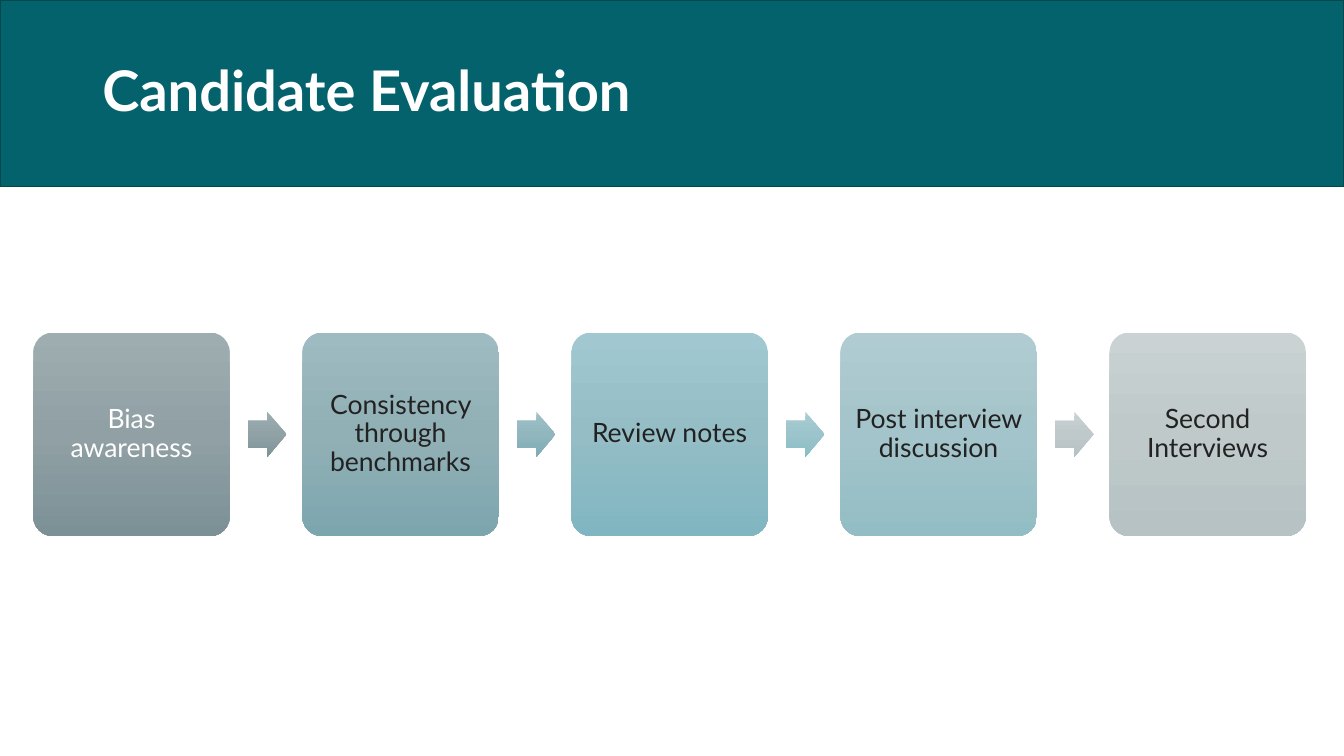
from copy import deepcopy

from pptx import Presentation
from pptx.dml.color import RGBColor
from pptx.enum.shapes import MSO_SHAPE
from pptx.enum.text import MSO_ANCHOR, PP_ALIGN
from pptx.oxml.ns import qn
from pptx.util import Cm, Pt

RECT = MSO_SHAPE.RECTANGLE
ROUND_RECT = MSO_SHAPE.ROUNDED_RECTANGLE
RIGHT_ARROW = MSO_SHAPE.RIGHT_ARROW
MIDDLE = MSO_ANCHOR.MIDDLE
LEFT, CENTER = PP_ALIGN.LEFT, PP_ALIGN.CENTER

THEME = {
    "banner": "03626B",
    "banner_line": "02494F",
    "title": {"name": "Lato", "size": Pt(40), "bold": True, "color": "FFFFFF"},
    "step_light": {"name": "Lato", "size": Pt(19), "color": "FFFFFF"},
    "step_dark": {"name": "Lato", "size": Pt(19), "color": "222222"},
    "boxes": [
        ("9DADB0", "90A0A4", "7C9196"),
        ("9EBBC2", "91B0B6", "7CA6AE"),
        ("A1C8D0", "94BDC6", "80B6C1"),
        ("B0CCD2", "A3C4CA", "93BDC4"),
        ("CAD2D3", "BFC9CA", "B6C2C4"),
    ],
    "arrows": [
        ("9DAEB2", "90A2A6", "7C9499"),
        ("9EC1C9", "91B6BE", "7DADB7"),
        ("A9CCD3", "9CC4CC", "8ABDC7"),
        ("CAD2D3", "BFC8CA", "B6C2C4"),
    ],
}

STEPS = [
    ("Bias awareness", "step_light"),
    ("Consistency through benchmarks", "step_dark"),
    ("Review notes", "step_dark"),
    ("Post interview discussion", "step_dark"),
    ("Second Interviews", "step_dark"),
]


def add_gradient_shape(kind, left, top, width, height, adjustments, colors):
    sp = slide.shapes.add_shape(kind, Cm(left), Cm(top), Cm(width), Cm(height))
    sp.shadow.inherit = False
    sp.line.fill.background()
    for n, value in enumerate(adjustments):
        sp.adjustments[n] = value
    sp.fill.gradient()
    sp.fill.gradient_angle = 270
    first = sp._element.spPr.find(".//" + qn("a:gs"))
    first.addnext(deepcopy(first))
    for stop, position, color in zip(sp.fill.gradient_stops, (0, 0.5, 1), colors):
        stop.position = position
        stop.color.rgb = RGBColor.from_string(color)
    return sp


def write_text(sp, text, style, align, inset_x, inset_y):
    tf = sp.text_frame
    frame = {
        "word_wrap": True, "vertical_anchor": MIDDLE,
        "margin_left": Cm(inset_x), "margin_right": Cm(inset_x),
        "margin_top": Cm(inset_y), "margin_bottom": Cm(inset_y),
    }
    for key, value in frame.items():
        setattr(tf, key, value)
    p = tf.paragraphs[0]
    p.alignment = align
    p.line_spacing = 0.9
    r = p.add_run()
    r.text = text
    for key, value in THEME[style].items():
        if key == "color":
            r.font.color.rgb = RGBColor.from_string(value)
        else:
            setattr(r.font, key, value)


prs = Presentation()
prs.slide_width, prs.slide_height = Cm(33.87), Cm(19.05)
slide = prs.slides.add_slide(prs.slide_layouts[6])

banner = slide.shapes.add_shape(RECT, 0, 0, prs.slide_width, Cm(4.7))
banner.shadow.inherit = False
banner.fill.solid()
banner.fill.fore_color.rgb = RGBColor.from_string(THEME["banner"])
banner.line.color.rgb = RGBColor.from_string(THEME["banner_line"])
banner.line.width = Pt(1)

title = slide.shapes.add_textbox(Cm(2.33), Cm(0.51), Cm(29.21), Cm(3.68))
write_text(title, "Candidate Evaluation", "title", LEFT, 0.25, 0.13)

box_left, box_top, box_width, box_height = 0.84, 8.38, 4.95, 5.13
arrow_width, arrow_height = 0.97, 1.14
arrow_left = box_left + box_width + 0.46
arrow_top = box_top + (box_height - arrow_height) / 2
pitch = 6.78

for i, (text, style) in enumerate(STEPS):
    box = add_gradient_shape(ROUND_RECT, box_left + i * pitch, box_top,
                             box_width, box_height, [0.1], THEME["boxes"][i])
    write_text(box, text, style, CENTER, 0.2, 0.2)

for i, colors in enumerate(THEME["arrows"]):
    add_gradient_shape(RIGHT_ARROW, arrow_left + i * pitch, arrow_top,
                       arrow_width, arrow_height, [0.6, 0.5], colors)

prs.save("out.pptx")
